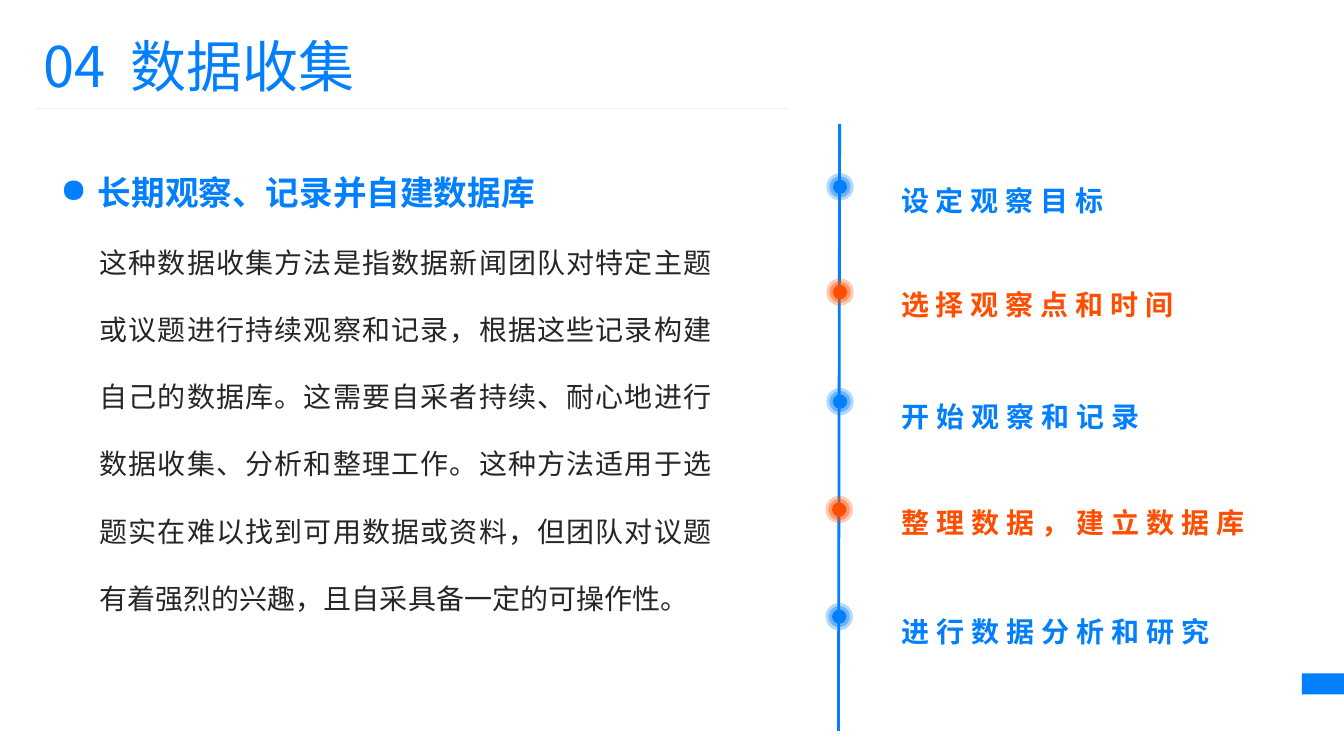
import itertools

import pptx
import pptx.dml.color
import pptx.enum.shapes
import pptx.enum.text
import pptx.oxml
import pptx.oxml.ns
import pptx.util

Cm, Pt = pptx.util.Cm, pptx.util.Pt
SHAPE = pptx.enum.shapes.MSO_SHAPE
ANCHOR = pptx.enum.text.MSO_ANCHOR
ALIGN = pptx.enum.text.PP_ALIGN

FONT = "Noto Sans CJK SC"
BLUE, ORANGE, DARK, PALE = "027FFD", "FF4E01", "262626", "F2F2F2"

BODY = (
    "这种数据收集方法是指数据新闻团队对特定主题或议题进行持续观察和记录，"
    "根据这些记录构建自己的数据库。这需要自采者持续、耐心地进行数据收集、"
    "分析和整理工作。这种方法适用于选题实在难以找到可用数据或资料，"
    "但团队对议题有着强烈的兴趣，且自采具备一定的可操作性。"
)
# Dot centre x and y, label left, top and width, label
STEPS = [
    (21.17, 4.71, 22.71, 2.46, 6.83, "设定观察目标"),
    (21.17, 7.36, 22.71, 5.08, 8.43, "选择观察点和时间"),
    (21.17, 10.12, 22.73, 7.9, 6.83, "开始观察和记录"),
    (21.15, 12.84, 22.73, 10.57, 9.7, "整理数据，建立数据库"),
    (21.15, 15.54, 22.73, 13.31, 9.37, "进行数据分析和研究"),
]


def rgb(value):
    return pptx.dml.color.RGBColor.from_string(value)


def add_child(parent, tag, **attributes):
    child = pptx.oxml.parse_xml(f"<a:{tag} {pptx.oxml.ns.nsdecls('a')}/>")
    for name, value in attributes.items():
        child.set(name, str(value))
    parent.append(child)


def set_alpha(fill, percent):
    color = fill._xPr.find(".//" + pptx.oxml.ns.qn("a:srgbClr"))
    add_child(color, "alpha", val=percent * 1000)


def add_run(p, text, size, color, bold=False, spacing=0):
    """Add a run; spacing is the extra room after each letter in points."""
    r = p.add_run()
    r.text = text
    r.font.size = Pt(size)
    r.font.bold = bold
    r.font.name = FONT
    r.font.color.rgb = rgb(color)
    props = r.font._element
    add_child(props, "ea", typeface=FONT)
    if spacing:
        props.set("spc", str(round(spacing * 100)))


def add_title(s):
    sp = s.shapes.title
    sp.left, sp.top, sp.width, sp.height = Cm(0.84), Cm(0.65), Cm(19.5), Cm(1.96)
    tf = sp.text_frame
    tf.auto_size = pptx.enum.text.MSO_AUTO_SIZE.NONE
    tf.vertical_anchor = ANCHOR.MIDDLE
    p = tf.paragraphs[0]
    p.alignment = ALIGN.LEFT
    add_run(p, "04", 40, BLUE)
    add_run(p, " ", 40, BLUE, spacing=9)
    add_run(p, "数据收集", 40, BLUE)


def add_text(s, left, top, width, height, anchor=ANCHOR.TOP):
    """Add a text box without margins and return its paragraph."""
    sp = s.shapes.add_textbox(Cm(left), Cm(top), Cm(width), Cm(height))
    tf = sp.text_frame
    tf.word_wrap = True
    tf.vertical_anchor = anchor
    tf.margin_left = tf.margin_top = tf.margin_right = tf.margin_bottom = 0
    return tf.paragraphs[0]


def add_shape(s, kind, left, top, width, height, color):
    sp = s.shapes.add_shape(kind, Cm(left), Cm(top), Cm(width), Cm(height))
    sp.shadow.inherit = False
    sp.fill.solid()
    sp.fill.fore_color.rgb = rgb(color)
    sp.line.fill.background()
    return sp


def add_circle(s, x, y, size, color):
    return add_shape(s, SHAPE.OVAL, x - size / 2, y - size / 2, size, size, color)


def add_line(s, x1, y1, x2, y2, color, width):
    line = s.shapes.add_connector(
        pptx.enum.shapes.MSO_CONNECTOR.STRAIGHT, Cm(x1), Cm(y1), Cm(x2), Cm(y2)
    )
    line.line.color.rgb = rgb(color)
    line.line.width = Pt(width)
    add_child(line._element.spPr, "effectLst")


def add_heading(s):
    p = add_text(s, 1.52, 4.24, 13.06, 1.12, ANCHOR.BOTTOM)
    props = p._p.get_or_add_pPr()
    props.set("marL", str(Cm(0.95)))
    props.set("indent", str(-Cm(0.95)))
    add_child(props, "buChar", char="●")
    add_run(p, "长期观察、记录并自建数据库", 24, BLUE, bold=True)


def add_body(s):
    p = add_text(s, 2.51, 5.33, 15.42, 10.54)
    p.alignment = ALIGN.JUSTIFY
    p.line_spacing = 2.0
    add_run(p, BODY, 20, DARK)


def add_step(s, x, y, left, top, width, label, color):
    halo = add_circle(s, x, y, 0.69, color)
    set_alpha(halo.fill, 30)
    core = add_circle(s, x, y, 0.36, color)
    core.line.color.rgb = rgb(color)
    core.line.width = Pt(5)
    set_alpha(core.line.fill, 40)
    p = add_text(s, left, top, width, 3.05)
    p.line_spacing = Pt(85.7)
    add_run(p, label, 20, color, bold=True, spacing=4.9)


def main():
    prs = pptx.Presentation()
    prs.slide_width, prs.slide_height = Cm(33.87), Cm(19.05)
    s = prs.slides.add_slide(prs.slide_layouts[5])
    add_shape(s, SHAPE.RECTANGLE, 32.81, 16.97, 1.06, 0.53, BLUE)
    add_title(s)
    add_line(s, 0.89, 2.74, 19.89, 2.74, PALE, 0.5)
    add_heading(s)
    add_body(s)
    add_line(s, 21.16, 3.12, 21.13, 18.42, BLUE, 2)
    for step, color in zip(STEPS, itertools.cycle([BLUE, ORANGE])):
        add_step(s, *step, color)
    prs.save("out.pptx")


if __name__ == "__main__":
    main()
